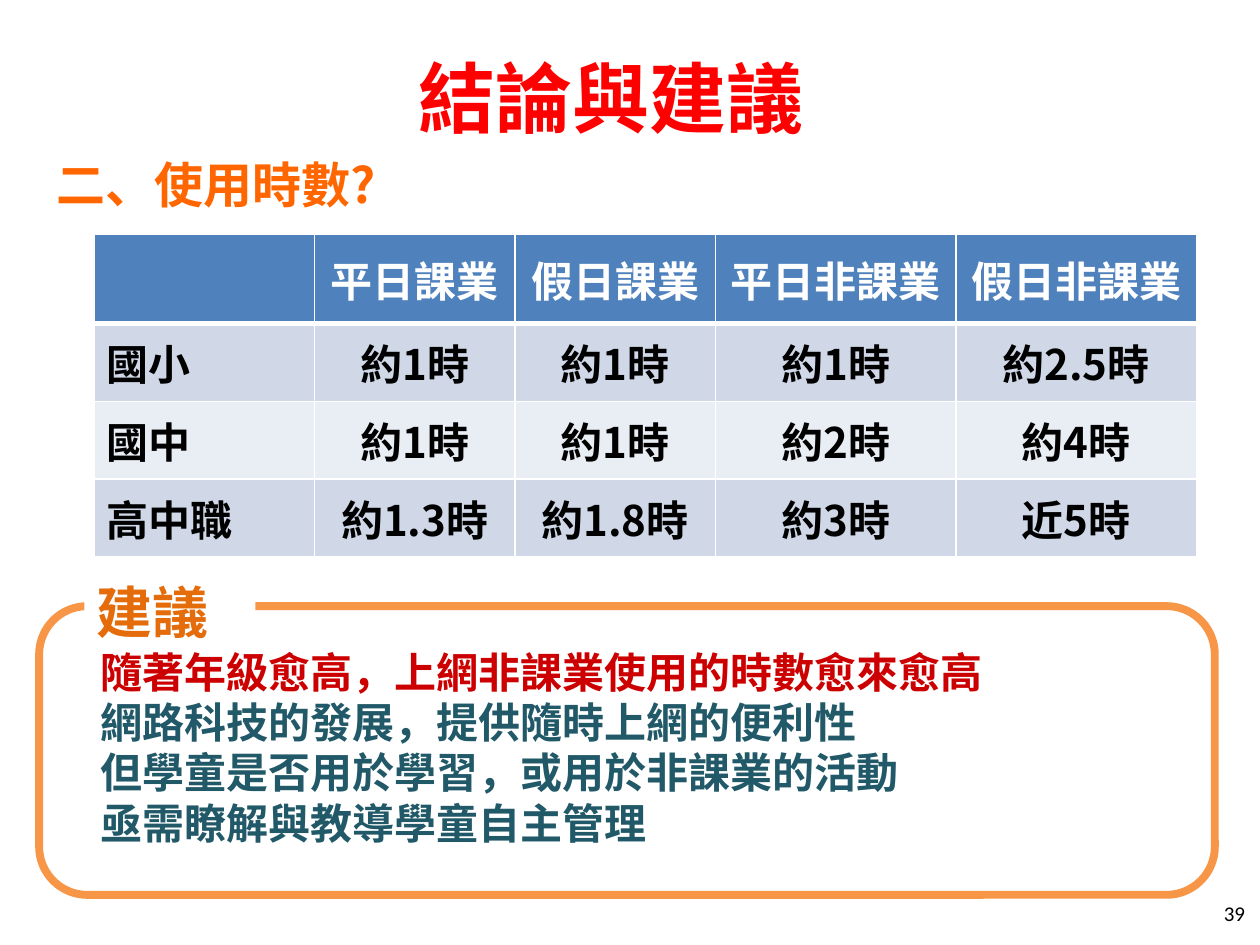
from dataclasses import dataclass

from lxml import etree
from pptx import Presentation
from pptx.dml.color import RGBColor
from pptx.enum import shapes, text
from pptx.oxml import ns
from pptx.util import Cm, Pt


@dataclass(frozen=True)
class Theme:
    """Fonts, colours and type sizes of the slide."""
    cjk: str = "Noto Sans CJK SC"
    latin: str = "Calibri"
    white: str = "FFFFFF"
    black: str = "000000"
    title: str = "FF0000"
    heading: str = "FF6600"
    frame: str = "F79646"
    label: str = "E46C0A"
    key: str = "CC0000"
    advice: str = "215968"
    header: str = "4F81BD"
    bands: tuple = ("D0D8E8", "E9EDF4")
    title_size: int = 44
    label_size: int = 32
    heading_size: int = 28
    text_size: int = 24
    number_size: int = 12


T = Theme()
LEFT, CENTER, RIGHT = text.PP_ALIGN.LEFT, text.PP_ALIGN.CENTER, text.PP_ALIGN.RIGHT
HOURS = [
    ["", "平日課業", "假日課業", "平日非課業", "假日非課業"],
    ["國小", "約1時", "約1時", "約1時", "約2.5時"],
    ["國中", "約1時", "約1時", "約2時", "約4時"],
    ["高中職", "約1.3時", "約1.8時", "約3時", "近5時"],
]
ADVICE = [
    ("隨著年級愈高，上網非課業使用的時數愈來愈高", T.key),
    ("網路科技的發展，提供隨時上網的便利性", T.advice),
    ("但學童是否用於學習，或用於非課業的活動", T.advice),
    ("亟需瞭解與教導學童自主管理", T.advice),
]


def rgb(value):
    """Return a colour from its hex value."""
    return RGBColor.from_string(value)


def style(p, size, color, align=LEFT, font=T.cjk, bold=True):
    """Set the alignment and font of a paragraph."""
    p.alignment = align
    p.font.size, p.font.bold, p.font.name = Pt(size), bold, font
    p.font.color.rgb = rgb(color)
    def_rpr = p._p.pPr.find(ns.qn("a:defRPr"))
    etree.SubElement(def_rpr, ns.qn("a:ea"), typeface=font)


def write(tf, lines, size, **options):
    """Fill a text frame with (text, colour) lines."""
    tf.word_wrap = True
    for i, (line, color) in enumerate(lines):
        p = tf.paragraphs[0] if i == 0 else tf.add_paragraph()
        p.text = line
        style(p, size, color, **options)


def add_text(s, box, lines, size, anchor=text.MSO_ANCHOR.TOP, **options):
    """Add a text box, its place given in centimetres."""
    tf = s.shapes.add_textbox(*map(Cm, box)).text_frame
    tf.vertical_anchor = anchor
    write(tf, lines, size, **options)


def add_panel(parent, kind, box):
    """Add a white preset shape without line or shadow."""
    sp = parent.shapes.add_shape(kind, *map(Cm, box))
    sp.shadow.inherit = False
    sp.fill.solid()
    sp.fill.fore_color.rgb = rgb(T.white)
    sp.line.fill.background()
    return sp


def add_borders(cell, row):
    """Draw white cell borders, thick below the header row."""
    tc_pr = cell._tc.get_or_add_tcPr()
    widths = {"L": 1, "R": 1, "T": 3 if row == 1 else 1, "B": 3 if row == 0 else 1}
    for side, width in widths.items():
        ln = etree.SubElement(tc_pr, ns.qn(f"a:ln{side}"), w=str(Pt(width)))
        fill = etree.SubElement(ln, ns.qn("a:solidFill"))
        etree.SubElement(fill, ns.qn("a:srgbClr"), val=T.white)


def add_hours_table(s, left, top, widths, heights):
    """Add the table of hours by school level."""
    size = Cm(sum(widths)), Cm(sum(heights))
    table = s.shapes.add_table(len(heights), len(widths), Cm(left), Cm(top), *size).table
    for column, width in zip(table.columns, widths):
        column.width = Cm(width)
    for r, (row, height) in enumerate(zip(table.rows, heights)):
        row.height = Cm(height)
        for c, cell in enumerate(row.cells):
            add_borders(cell, r)
            cell.fill.solid()
            cell.fill.fore_color.rgb = rgb(T.bands[(r - 1) % 2] if r else T.header)
            cell.vertical_anchor = text.MSO_ANCHOR.MIDDLE
            color = T.black if r else T.white
            write(cell.text_frame, [(HOURS[r][c], color)], T.text_size,
                  align=CENTER if c else LEFT)


def add_advice_frame(s):
    """Add the rounded frame with its label as one group."""
    group = s.shapes.add_group_shape()
    frame = add_panel(group, shapes.MSO_SHAPE.ROUNDED_RECTANGLE, (0.79, 12.22, 23.7, 5.82))
    frame.line.color.rgb = rgb(T.frame)
    frame.line.width = Pt(4.5)
    label = add_panel(group, shapes.MSO_SHAPE.RECTANGLE, (1.7, 11.51, 3.45, 1.6))
    label.text_frame.vertical_anchor = text.MSO_ANCHOR.TOP
    write(label.text_frame, [("建議", T.label)], T.label_size)


def main():
    """Build and save the slide."""
    prs = Presentation()
    prs.slide_width, prs.slide_height = Cm(25.4), Cm(19.05)
    s = prs.slides.add_slide(prs.slide_layouts[6])
    add_text(s, (0.89, 0.36, 22.86, 3.18), [("結論與建議", T.title)], T.title_size,
             anchor=text.MSO_ANCHOR.MIDDLE, align=CENTER)
    add_text(s, (0.89, 3, 23.8, 8.74), [("二、使用時數?", T.heading)], T.heading_size)
    add_hours_table(s, 1.9, 4.72, [4.44, 4.04, 4.04, 4.85, 4.85], [1.8] + [1.57] * 3)
    add_advice_frame(s)
    add_text(s, (1.78, 12.9, 22.63, 4.37), ADVICE, T.text_size)
    add_text(s, (19.43, 18.03, 5.92, 1.02), [("39", T.black)], T.number_size,
             align=RIGHT, font=T.latin, bold=False)
    prs.save("out.pptx")


if __name__ == "__main__":
    main()
